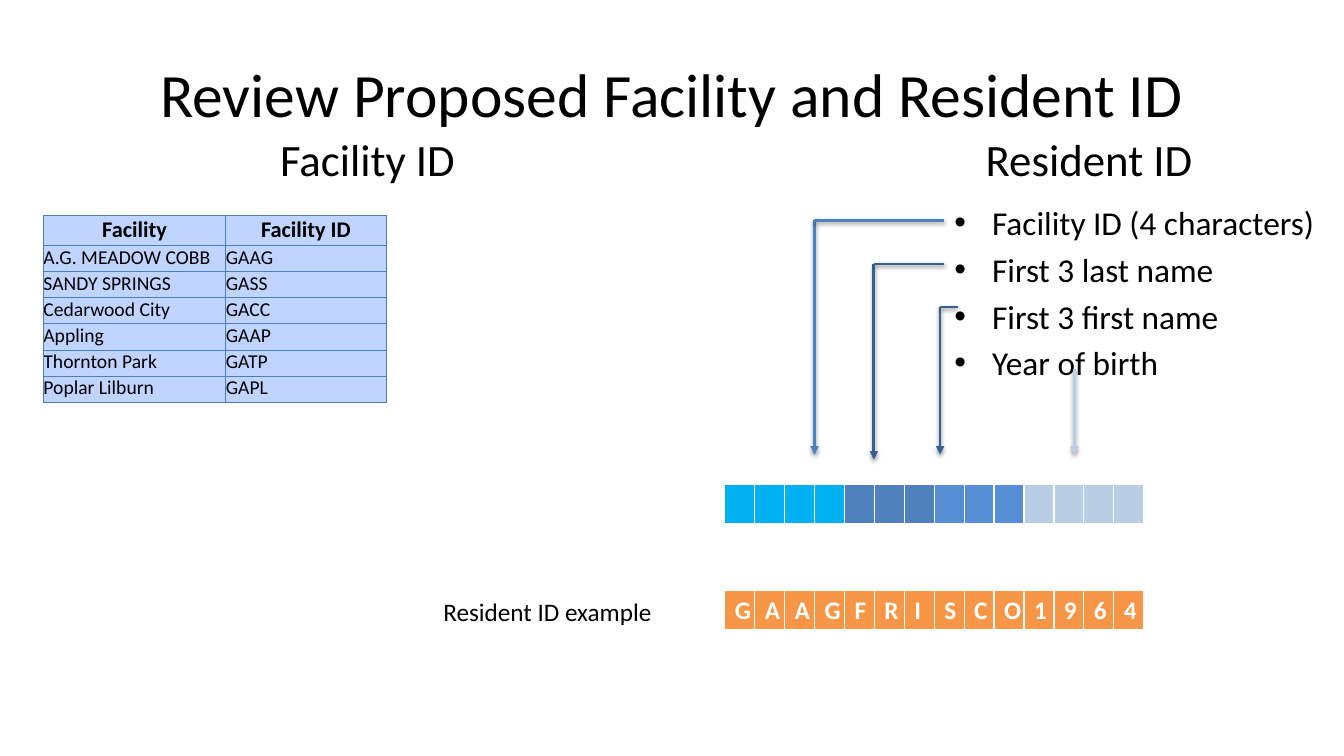
from dataclasses import dataclass

from lxml import etree
from pptx import Presentation
from pptx import util as u
from pptx.dml.color import RGBColor
from pptx.enum import shapes, text
from pptx.oxml import ns

BLACK = RGBColor(0x00, 0x00, 0x00)
WHITE = RGBColor(0xFF, 0xFF, 0xFF)
PALE_BLUE = RGBColor(0xBF, 0xD4, 0xFF)
BORDER_BLUE = RGBColor(0x4B, 0x7E, 0xBC)
CYAN = RGBColor(0x00, 0xB0, 0xF0)
BLUE = RGBColor(0x4F, 0x81, 0xBD)
DARK_BLUE = RGBColor(0x37, 0x60, 0x92)
MID_BLUE = RGBColor(0x55, 0x8E, 0xD5)
LIGHT_BLUE = RGBColor(0xB9, 0xCD, 0xE5)
ORANGE = RGBColor(0xF7, 0x96, 0x46)

FONT = "Calibri"
LEFT = text.PP_ALIGN.LEFT
CENTER = text.PP_ALIGN.CENTER
TOP = text.MSO_ANCHOR.TOP
MIDDLE = text.MSO_ANCHOR.MIDDLE


@dataclass
class Box:
    left: float
    top: float
    width: float
    height: float


@dataclass
class Border:
    color: RGBColor
    sides: dict[str, float]


@dataclass
class Guide:
    """An arrow down to the ID cells, with an optional branch to its bullet."""
    x: float
    top: float
    tip: float
    color: RGBColor
    branch_end: float | None = None


FACILITIES = [
    ("Facility", "Facility ID"),
    ("A.G. MEADOW COBB", "GAAG"),
    ("SANDY SPRINGS", "GASS"),
    ("Cedarwood City", "GACC"),
    ("Appling", "GAAP"),
    ("Thornton Park", "GATP"),
    ("Poplar Lilburn", "GAPL"),
]
ID_PARTS = ["Facility ID (4 characters)", "First 3 last name",
            "First 3 first name", "Year of birth"]
ID_COLORS = [CYAN] * 4 + [BLUE] * 3 + [MID_BLUE] * 3 + [LIGHT_BLUE] * 4
EXAMPLE_ID = "GAAGFRISCO1964"
GUIDES = [
    Guide(581.8, 157.5, 324.7, BLUE, 674.6),
    Guide(624.2, 188.6, 328.3, DARK_BLUE, 674.6),
    Guide(671.5, 219.3, 324.7, DARK_BLUE, 684),
    Guide(767.5, 263.5, 324.7, LIGHT_BLUE),
]
GRID_BORDER = Border(BORDER_BLUE, {"L": 0.75, "R": 0.75, "T": 0.75, "B": 0.75})
ID_BORDER = Border(WHITE, {"L": 1, "R": 1, "T": 1, "B": 3})


def add_element(parent, tag: str, **attributes):
    values = {name: str(value) for name, value in attributes.items()}
    return etree.SubElement(parent, ns.qn(tag), values)


def write(frame, content: str, *, size: float, color: RGBColor = BLACK,
          bold: bool = False, align=LEFT, bullet_indent: float = 0,
          tab_stop: float = 0, gap: float = 0) -> None:
    """Fill a text frame, one paragraph for each line of content."""
    for index, line in enumerate(content.split("\n")):
        para = frame.paragraphs[0] if index == 0 else frame.add_paragraph()
        props = para._p.get_or_add_pPr()
        if bullet_indent:
            props.set("marL", str(u.Pt(bullet_indent)))
            props.set("indent", str(-u.Pt(bullet_indent)))
            add_element(props, "a:buFont", typeface="Arial")
            add_element(props, "a:buChar", char="•")
        if tab_stop:
            stops = add_element(props, "a:tabLst")
            add_element(stops, "a:tab", pos=u.Pt(tab_stop), algn="l")
        para.alignment = align
        if index and gap:
            para.space_before = u.Pt(gap)
        span = para.add_run()
        span.text = line
        span.font.name = FONT
        span.font.size = u.Pt(size)
        span.font.bold = bold
        span.font.color.rgb = color


def add_text(page, place: Box, content: str, *, anchor=TOP, **text_format) -> None:
    box = page.shapes.add_textbox(u.Pt(place.left), u.Pt(place.top),
                                  u.Pt(place.width), u.Pt(place.height))
    box.text_frame.word_wrap = True
    box.text_frame.vertical_anchor = anchor
    write(box.text_frame, content, **text_format)


def style_cell(cell, fill: RGBColor, border: Border) -> None:
    props = cell._tc.get_or_add_tcPr()
    for side, width in border.sides.items():
        line = add_element(props, f"a:ln{side}", w=u.Pt(width))
        solid = add_element(line, "a:solidFill")
        add_element(solid, "a:srgbClr", val=border.color)
    cell.fill.solid()
    cell.fill.fore_color.rgb = fill


def add_plain_table(page, place: Box, widths: list[float], heights: list[float]):
    table = page.shapes.add_table(
        len(heights), len(widths), u.Pt(place.left), u.Pt(place.top),
        u.Pt(place.width), u.Pt(place.height)).table
    table.first_row = False
    table.horz_banding = False
    for column, width in zip(table.columns, widths):
        column.width = u.Pt(width)
    for row, height in zip(table.rows, heights):
        row.height = u.Pt(height)
    return table


def add_facility_table(page) -> None:
    heights = [21.6] + [18.6] * (len(FACILITIES) - 1)
    table = add_plain_table(page, Box(31, 154, 244.8, sum(heights)),
                            [130.3, 114.5], heights)
    for row, names in enumerate(FACILITIES):
        header = row == 0
        for column, name in enumerate(names):
            cell = table.cell(row, column)
            cell.margin_left = cell.margin_right = cell.margin_top = 0
            cell.margin_bottom = u.Pt(1.4)
            cell.vertical_anchor = MIDDLE if header else TOP
            style_cell(cell, PALE_BLUE, GRID_BORDER)
            write(cell.text_frame, name, size=16 if header else 14,
                  bold=header, align=CENTER if header else LEFT)


def add_id_strip(page, top: float, fills: list[RGBColor], letters: str = "") -> None:
    count = len(fills)
    table = add_plain_table(page, Box(517.7, top, 299.6, 28.3),
                            [299.6 / count] * count, [28.3])
    for column, fill in enumerate(fills):
        cell = table.cell(0, column)
        style_cell(cell, fill, ID_BORDER)
        if letters:
            write(cell.text_frame, letters[column], size=18, color=WHITE, bold=True)


def add_line(page, start: tuple[float, float], end: tuple[float, float],
             color: RGBColor, arrow: bool = False) -> None:
    line = page.shapes.add_connector(
        shapes.MSO_CONNECTOR.STRAIGHT, *map(u.Pt, start), *map(u.Pt, end))
    line.line.color.rgb = color
    line.line.width = u.Pt(2)
    if arrow:
        add_element(line.line._get_or_add_ln(), "a:tailEnd", type="triangle")
    effects = add_element(line._element.spPr, "a:effectLst")
    shadow = add_element(effects, "a:outerShdw", blurRad=u.Pt(3.1), dist=u.Pt(1.6),
                         dir=90 * 60000, rotWithShape=0)
    shade = add_element(shadow, "a:srgbClr", val=BLACK)
    add_element(shade, "a:alpha", val=38000)


def add_guide(page, guide: Guide) -> None:
    corner = (guide.x, guide.top)
    add_line(page, corner, (guide.x, guide.tip), guide.color, arrow=True)
    if guide.branch_end is not None:
        add_line(page, corner, (guide.branch_end, guide.top), guide.color)


def main() -> None:
    deck = Presentation()
    deck.slide_width, deck.slide_height = u.Pt(960), u.Pt(540)
    page = deck.slides.add_slide(deck.slide_layouts[6])
    add_text(page, Box(48, 21.6, 864, 90), "Review Proposed Facility and Resident ID",
             size=44, align=CENTER, anchor=MIDDLE)
    add_facility_table(page)
    add_text(page, Box(674.6, 141.1, 285.4, 128.9), "\n".join(ID_PARTS),
             size=23.8, bullet_indent=27, gap=4.76)
    add_id_strip(page, 346.3, ID_COLORS)
    add_id_strip(page, 422, [ORANGE] * len(EXAMPLE_ID), EXAMPLE_ID)
    for guide in GUIDES:
        add_guide(page, guide)
    add_text(page, Box(309.6, 422.6, 164.9, 28.8), "Resident ID example", size=18)
    add_text(page, Box(193, 90.7, 672.5, 46.1), "Facility ID\tResident ID",
             size=32, tab_stop=504)
    deck.save("out.pptx")


if __name__ == "__main__":
    main()
